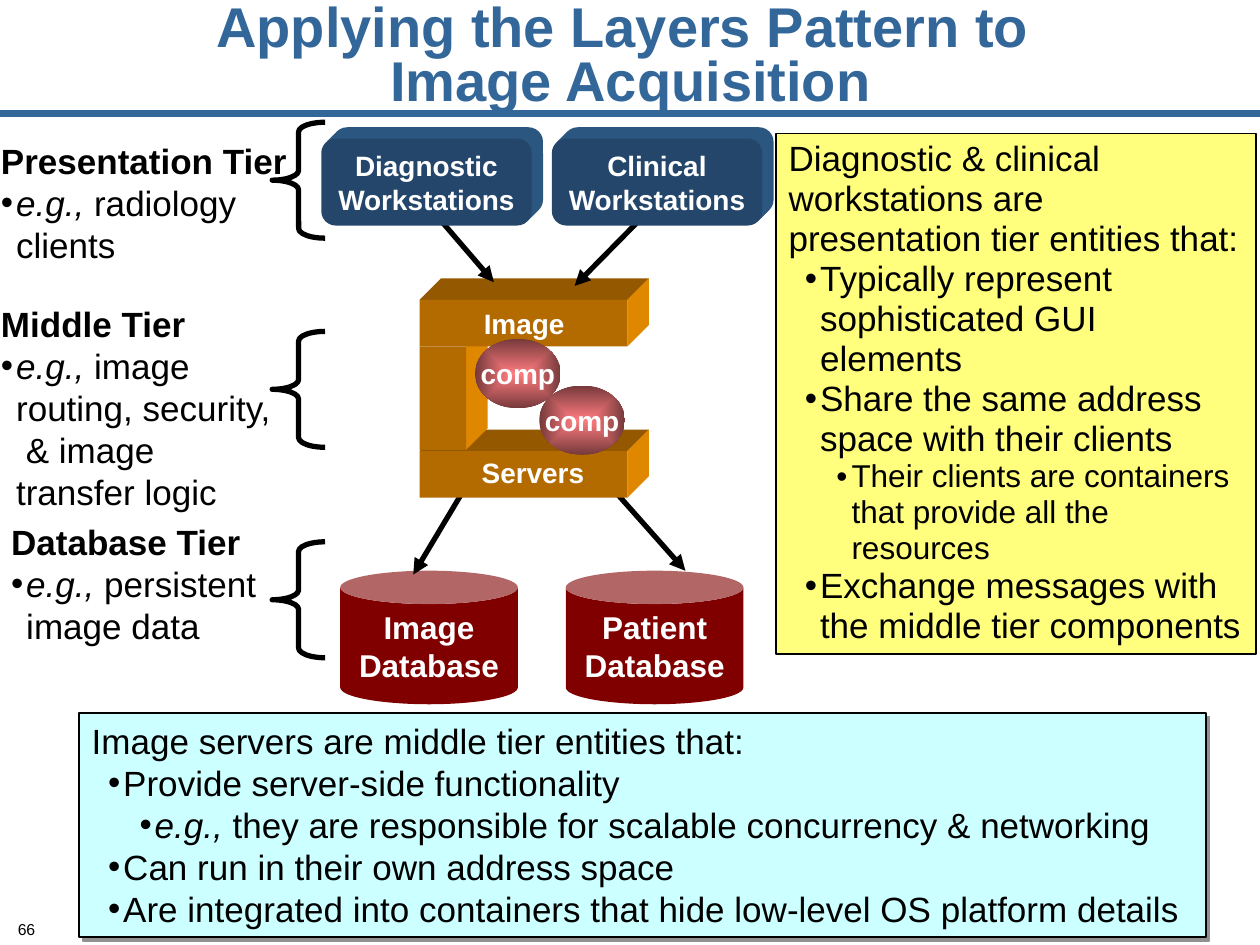
from lxml.etree import SubElement
from pptx import Presentation
from pptx.dml.color import RGBColor
from pptx.enum.shapes import MSO_CONNECTOR, MSO_SHAPE
from pptx.enum.text import MSO_ANCHOR, PP_ALIGN
from pptx.oxml.ns import qn
from pptx.util import Inches, Pt

COLORS = {
    "blue": "336699", "black": "000000", "white": "FFFFFF",
    "cyan": "CCFFFF", "yellow": "FFFF7D", "shadow": "919191", "maroon": "800000",
    "orange": "B36B00", "orange_top": "945900", "orange_side": "E08700",
    "navy": "24466B", "navy_side": "2B5680",
    "comp_center": "FF7C80", "comp_edge": "76393B",
}

TITLE = ["Applying the Layers Pattern to ", "Image Acquisition"]
PAGE = "66"
TIERS = [
    ("Presentation Tier", " radiology clients", (-0.09, 1.06, 2.67, 1.1), 0.97),
    ("Middle Tier", " image routing, security,  & image transfer logic",
     (-0.09, 2.35, 2.4, 1.77), 2.63),
    ("Database Tier", " persistent image data", (-0.01, 4.08, 2.17, 1.1), 4.3),
]
WORKSTATIONS = [("Diagnostic", 2.55), ("Clinical", 4.38)]
DATABASES = [("Image", 2.7), ("Patient", 4.49)]
SERVER_BLOCKS = [(3.33, 3.58, 1.65, 0.37), (3.33, 2.75, 0.37, 0.82), (3.33, 2.38, 1.65, 0.37)]
SERVER_LABELS = [("Image", (3.56, 2.38, 1.2, 0.37)), ("Servers", (3.53, 3.56, 1.4, 0.37))]
COMPONENTS = [(3.77, 2.69), (4.28, 3.06)]
WORKSTATION_ARROWS = [(3.37, 1.6, 3.92, 2.24), (5.22, 1.6, 4.56, 2.27)]
DATABASE_ARROWS = [(3.83, 3.64, 3.28, 4.56), (4.65, 3.64, 5.44, 4.53)]
PRESENTATION_NOTE = [
    (0, 20, ["Diagnostic & clinical workstations are presentation tier entities that:"]),
    (1, 20, ["Typically represent sophisticated GUI elements"]),
    (1, 20, ["Share the same address space with their clients"]),
    (2, 18, ["Their clients are containers that provide all the resources"]),
    (1, 20, ["Exchange messages with the middle tier components"]),
]
SERVERS_NOTE = [
    (0, 20, ["Image servers are middle tier entities that:"]),
    (1, 20, ["Provide server-side functionality"]),
    (2, 20, ["e.g., ", "they are responsible for scalable concurrency & networking"]),
    (1, 20, ["Can run in their own address space"]),
    (1, 20, ["Are integrated into containers that hide low-level OS platform details"]),
]
BLOCK_DEPTH = 0.17
PLATE_DEPTH = 0.09
PLATE_STEPS = 6

prs = Presentation()
prs.slide_width, prs.slide_height = Inches(10), Inches(7.5)
slide = prs.slides.add_slide(prs.slide_layouts[6])


def rgb(name):
    return RGBColor.from_string(COLORS[name])


def style(shape, fill=None, line=None, width=1):
    shape.shadow.inherit = False
    if fill:
        shape.fill.solid()
        shape.fill.fore_color.rgb = rgb(fill)
    else:
        shape.fill.background()
    if line:
        shape.line.color.rgb = rgb(line)
        shape.line.width = Pt(width)
    else:
        shape.line.fill.background()
    return shape


def add_shape(kind, box, **look):
    return style(slide.shapes.add_shape(kind, *map(Inches, box)), **look)


def add_text(box):
    return slide.shapes.add_textbox(*map(Inches, box))


def add_line(ends, color, width):
    line = slide.shapes.add_connector(MSO_CONNECTOR.STRAIGHT, *map(Inches, ends))
    line.line.color.rgb = rgb(color)
    line.line.width = Pt(width)
    SubElement(line._element.spPr, qn("a:effectLst"))
    return line


def add_arrows(arrows):
    for ends in arrows:
        arrow = add_line(ends, "black", 3)
        SubElement(arrow._element.spPr.find(qn("a:ln")), qn("a:tailEnd"), type="triangle")


def set_font(paragraph, size, color="black", bold=False):
    font = paragraph.font
    font.name, font.size, font.bold = "Arial", Pt(size), bold
    font.color.rgb = rgb(color)


def indent(paragraph, margin, bullet):
    props = paragraph._p.get_or_add_pPr()
    props.set("marL", str(Inches(margin)))
    props.set("indent", str(Inches(-0.12)))
    if bullet:
        SubElement(props, qn("a:buFont"), typeface="Arial")
        SubElement(props, qn("a:buChar"), char="•")


def paragraphs(frame, count):
    return [frame.paragraphs[0]] + [frame.add_paragraph() for _ in range(count - 1)]


def add_runs(paragraph, parts):
    for i, part in enumerate(parts):
        run = paragraph.add_run()
        run.text = part
        if len(parts) > 1:
            run.font.italic = i == 0


def write_label(shape, lines, size, wrap=False):
    frame = shape.text_frame
    frame.word_wrap = wrap
    frame.vertical_anchor = MSO_ANCHOR.MIDDLE
    for paragraph, line in zip(paragraphs(frame, len(lines)), lines):
        paragraph.text = line
        paragraph.alignment = PP_ALIGN.CENTER
        set_font(paragraph, size, "white", True)


def write_note(shape, items, spacing=None):
    frame = shape.text_frame
    frame.word_wrap = True
    frame.vertical_anchor = MSO_ANCHOR.TOP
    for paragraph, (level, size, parts) in zip(paragraphs(frame, len(items)), items):
        paragraph.level = level
        paragraph.alignment = PP_ALIGN.LEFT
        if level:
            indent(paragraph, 0.25 * level, True)
        if spacing:
            paragraph.line_spacing = spacing
        add_runs(paragraph, parts)
        set_font(paragraph, size)


def add_face(points, color):
    builder = slide.shapes.build_freeform(*map(Inches, points[0]), scale=1.0)
    builder.add_line_segments([tuple(map(Inches, p)) for p in points[1:]])
    style(builder.convert_to_shape(), fill=color)


def add_block(x, y, w, h):
    d, right, bottom = BLOCK_DEPTH, x + w, y + h
    add_face([(x, y), (x + d, y - d), (right + d, y - d), (right, y)], "orange_top")
    add_face([(right, y), (right + d, y - d), (right + d, bottom - d), (right, bottom)],
             "orange_side")
    add_shape(MSO_SHAPE.RECTANGLE, (x, y, w, h), fill="orange")


add_line((0, 0.9, 10, 0.9), "blue", 3.75)

page = add_text((0, 7.32, 0.28, 0.13)).text_frame
page.margin_left = page.margin_right = page.margin_top = page.margin_bottom = 0
page.paragraphs[0].text = PAGE
page.paragraphs[0].alignment = PP_ALIGN.RIGHT
page.paragraphs[0].line_spacing = 0.9
set_font(page.paragraphs[0], 9)

title = add_text((0.01, 0.2, 9.99, 0.53)).text_frame
title.word_wrap = True
title.vertical_anchor = MSO_ANCHOR.MIDDLE
heading = title.paragraphs[0]
heading.add_run().text = TITLE[0]
heading.add_line_break()
heading.add_run().text = TITLE[1]
heading.alignment = PP_ALIGN.CENTER
heading.line_spacing = 0.8
set_font(heading, 32, "blue", True)

servers_note = add_shape(MSO_SHAPE.RECTANGLE, (0.63, 5.66, 8.94, 1.78), fill="cyan", line="black")
shadow = SubElement(servers_note._element.spPr.find(qn("a:effectLst")), qn("a:outerShdw"),
                    dist=str(Pt(2.8)), dir="2700000", algn="ctr", rotWithShape="0")
SubElement(shadow, qn("a:srgbClr"), val=COLORS["shadow"])
write_note(servers_note, SERVERS_NOTE)

for name, x in DATABASES:
    can = add_shape(MSO_SHAPE.CAN, (x, 4.53, 1.41, 1.06), fill="maroon")
    can.adjustments[0] = 0.25
    write_label(can, [name, "Database"], 18, wrap=True)
add_arrows(DATABASE_ARROWS)

for name, example, box, brace_top in TIERS:
    frame = add_text(box).text_frame
    frame.word_wrap = True
    tier, detail = paragraphs(frame, 2)
    indent(tier, 0.12, False)
    tier.text = name
    set_font(tier, 20, bold=True)
    indent(detail, 0.12, True)
    add_runs(detail, ["e.g.,", example])
    set_font(detail, 20)
    brace = add_shape(MSO_SHAPE.LEFT_BRACE, (2.16, brace_top, 0.42, 0.92), line="black", width=3)
    brace.adjustments[0] = 0.183

for block in SERVER_BLOCKS:
    add_block(*block)
for x, y in COMPONENTS:
    component = add_shape(MSO_SHAPE.OVAL, (x, y, 0.68, 0.55))
    component.fill.gradient()
    for stop, color in zip(component.fill.gradient_stops, ("comp_center", "comp_edge")):
        stop.color.rgb = rgb(color)
    gradient = component._element.spPr.find(qn("a:gradFill"))
    gradient.remove(gradient.find(qn("a:lin")))
    center = SubElement(gradient, qn("a:path"), path="shape")
    SubElement(center, qn("a:fillToRect"), l="50000", t="50000", r="50000", b="50000")
    write_label(component, ["comp"], 16)
for label, box in SERVER_LABELS:
    write_label(add_text(box), [label], 16)
add_arrows(WORKSTATION_ARROWS)

for name, x in WORKSTATIONS:
    for step in range(PLATE_STEPS, -1, -1):
        shift = PLATE_DEPTH * step / PLATE_STEPS
        plate = add_shape(MSO_SHAPE.ROUNDED_RECTANGLE, (x + shift, 1.1 - shift, 1.67, 0.69),
                          fill="navy_side" if step else "navy")
    write_label(plate, [name, "Workstations"], 16)

presentation_note = add_shape(MSO_SHAPE.RECTANGLE, (6.16, 1.06, 3.81, 4.13),
                              fill="yellow", line="black")
write_note(presentation_note, PRESENTATION_NOTE, 0.95)

prs.save("out.pptx")
